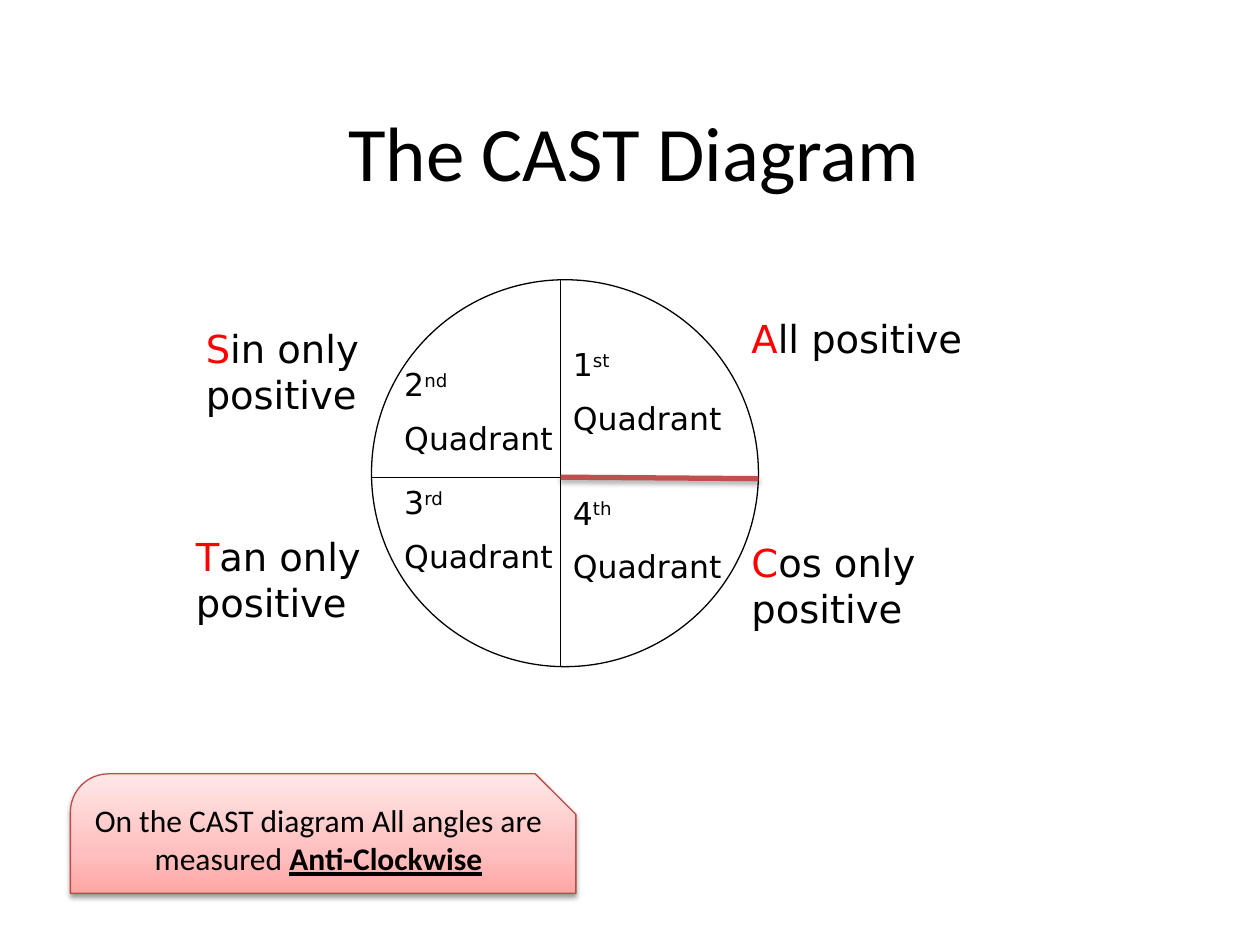
from copy import deepcopy
from dataclasses import dataclass

from lxml.etree import SubElement
from pptx import Presentation
from pptx.dml.color import RGBColor
from pptx.enum.shapes import MSO_CONNECTOR, MSO_SHAPE
from pptx.enum.text import MSO_ANCHOR, PP_ALIGN
from pptx.oxml.ns import qn
from pptx.util import Cm, Pt


@dataclass(frozen=True)
class Theme:
    ink: str = "000000"
    paper: str = "FFFFFF"
    initial: str = "FF0000"
    start_ray: str = "C0504D"
    note_line: str = "BF4C48"
    note_gradient: tuple = ((0, "FFA6A5"), (0.35, "FFC0BF"), (1, "FFE7E7"))
    heading_font: str = "Calibri"
    diagram_font: str = "DejaVu Sans"
    title_size: int = 44
    ratio_size: int = 22
    body_size: int = 18


def apply_format(target, values):
    for attribute, value in values.items():
        setattr(target, attribute, value)


class SlideBuilder:
    def __init__(self, slide, theme):
        self.slide = slide
        self.theme = theme

    def run(self, paragraph, text, font, size, color=None, superscript=False, **extra):
        run = paragraph.add_run()
        run.text = text
        apply_format(run.font, {"name": font, "size": Pt(size), **extra})
        run.font.color.rgb = RGBColor.from_string(color or self.theme.ink)
        if superscript:
            run.font._element.set("baseline", "30000")

    def stroke(self, line, color, width):
        line.color.rgb = RGBColor.from_string(color)
        line.width = Pt(width)

    def shadow(self, element, distance=None, opacity=0):
        effects = element.spPr.find(qn("a:effectLst"))
        if effects is None:
            effects = SubElement(element.spPr, qn("a:effectLst"))
        if distance:
            outer = SubElement(effects, qn("a:outerShdw"), blurRad=str(Pt(3.1)),
                               dist=str(Pt(distance)), dir="5400000", rotWithShape="0")
            color = SubElement(outer, qn("a:srgbClr"), val=self.theme.ink)
            SubElement(color, qn("a:alpha"), val=str(opacity * 1000))

    def title(self, text, left, top, width, height):
        title = self.slide.shapes.title
        apply_format(title, {"left": Cm(left), "top": Cm(top),
                             "width": Cm(width), "height": Cm(height)})
        title.text_frame.vertical_anchor = MSO_ANCHOR.MIDDLE
        paragraph = title.text_frame.paragraphs[0]
        paragraph.alignment = PP_ALIGN.CENTER
        self.run(paragraph, text, self.theme.heading_font, self.theme.title_size)

    def circle(self, left, top, diameter):
        circle = self.slide.shapes.add_shape(
            MSO_SHAPE.OVAL, Cm(left), Cm(top), Cm(diameter), Cm(diameter))
        circle.shadow.inherit = False
        circle.fill.solid()
        circle.fill.fore_color.rgb = RGBColor.from_string(self.theme.paper)
        self.stroke(circle.line, self.theme.ink, 0.75)

    def line(self, start, end, color=None, width=0.75, **shadow):
        line = self.slide.shapes.add_connector(
            MSO_CONNECTOR.STRAIGHT, *map(Cm, start + end))
        self.stroke(line.line, color or self.theme.ink, width)
        self.shadow(line._element, **shadow)

    def text_frame(self, left, top, width, height):
        box = self.slide.shapes.add_textbox(Cm(left), Cm(top), Cm(width), Cm(height))
        box.text_frame.word_wrap = True
        return box.text_frame

    def quadrant(self, number, suffix, left, top):
        frame = self.text_frame(left, top, 3.81, 2.16)
        style = (self.theme.diagram_font, self.theme.body_size)
        ordinal = frame.paragraphs[0]
        self.run(ordinal, number, *style)
        self.run(ordinal, suffix, *style, superscript=True)
        name = frame.add_paragraph()
        name.space_before = Pt(9)
        self.run(name, "Quadrant", *style)

    def ratio(self, initial, rest, left, top, height):
        paragraph = self.text_frame(left, top, 6.8, height).paragraphs[0]
        style = (self.theme.diagram_font, self.theme.ratio_size)
        self.run(paragraph, initial, *style, color=self.theme.initial)
        self.run(paragraph, rest, *style)

    def note(self, text, emphasis, left, top, width, height):
        note = self.slide.shapes.add_shape(
            MSO_SHAPE.SNIP_ROUND_RECTANGLE, Cm(left), Cm(top), Cm(width), Cm(height))
        note.adjustments[0], note.adjustments[1] = 0.32, 0.34
        note.shadow.inherit = False
        note.fill.gradient()
        note.fill.gradient_angle = 90
        stops = note._element.spPr.find(qn("a:gradFill")).find(qn("a:gsLst"))
        stops.append(deepcopy(stops[0]))
        for stop, (position, color) in zip(note.fill.gradient_stops, self.theme.note_gradient):
            stop.position = position
            stop.color.rgb = RGBColor.from_string(color)
        self.stroke(note.line, self.theme.note_line, 0.75)
        self.shadow(note._element, distance=1.6, opacity=38)
        apply_format(note.text_frame, {"word_wrap": True,
                                       "vertical_anchor": MSO_ANCHOR.MIDDLE})
        paragraph = note.text_frame.paragraphs[0]
        paragraph.alignment = PP_ALIGN.CENTER
        style = (self.theme.heading_font, self.theme.body_size)
        self.run(paragraph, text, *style)
        self.run(paragraph, emphasis, *style, bold=True, underline=True)


def main():
    theme = Theme()
    presentation = Presentation()
    apply_format(presentation, {"slide_width": Cm(25.4), "slide_height": Cm(19.05)})
    slide = presentation.slides.add_slide(presentation.slide_layouts[5])
    builder = SlideBuilder(slide, theme)

    builder.title("The CAST Diagram", 1.98, 1, 21.6, 4.08)

    circle_left, circle_top, diameter = 7.49, 5.64, 7.8
    circle_right, circle_bottom = circle_left + diameter, circle_top + diameter
    axis_x, axis_y = 11.3, 9.62
    builder.circle(circle_left, circle_top, diameter)
    builder.line((circle_left, axis_y), (circle_right, axis_y))
    builder.line((axis_x, circle_bottom), (axis_x, circle_top))

    west_column = 7.9
    for quadrant in (("1", "st", axis_x, 6.83), ("2", "nd", west_column, 7.24),
                     ("3", "rd", west_column, axis_y), ("4", "th", axis_x, 9.83)):
        builder.quadrant(*quadrant)

    east_labels = 14.9
    for ratio in (("A", "ll positive", east_labels, 6.22, 1.19),
                  ("C", "os only positive", east_labels, 10.74, 2.11),
                  ("S", "in only positive", 3.9, 6.43, 2.11),
                  ("T", "an only positive", 3.7, 10.62, 2.11)):
        builder.ratio(*ratio)

    builder.line((axis_x, axis_y), (circle_right, axis_y + 0.03),
                 theme.start_ray, 3, distance=1.8, opacity=35)
    builder.note("On the CAST diagram All angles are measured ", "Anti-Clockwise",
                 1.42, 15.6, 10.19, 2.41)

    presentation.save("out.pptx")


if __name__ == "__main__":
    main()
